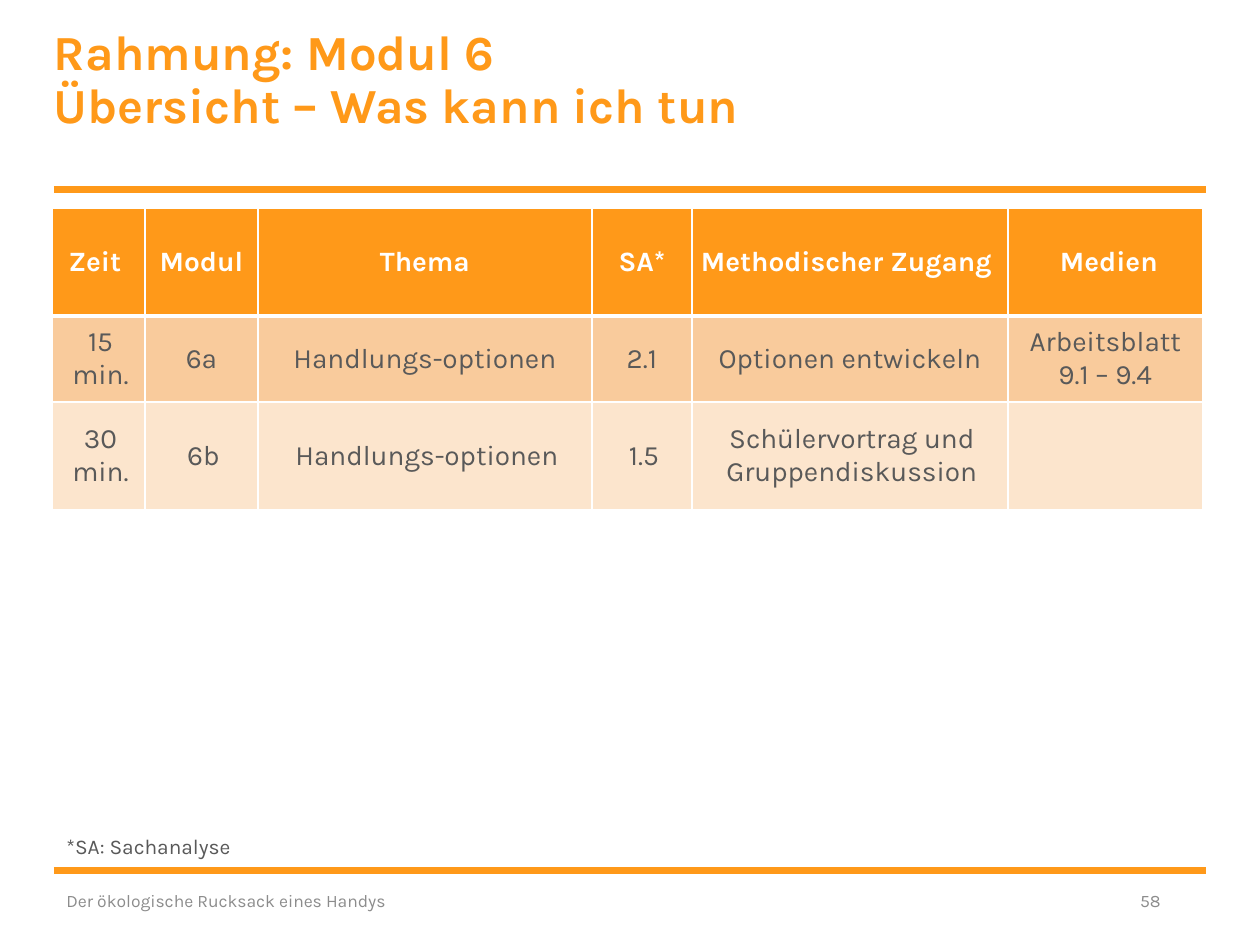
from dataclasses import dataclass
from lxml.etree import SubElement as Sub
from pptx import Presentation
from pptx.dml.color import RGBColor as Rgb
from pptx.enum.shapes import MSO_CONNECTOR as Conn
from pptx.enum.text import MSO_ANCHOR as Anchor, PP_ALIGN as Align
from pptx.oxml.ns import qn
from pptx.util import Pt


@dataclass(frozen=True)
class Theme:
    face: str = "Karla"
    main: str = "FF9919"
    white: str = "FFFFFF"
    ink: str = "595959"
    pale: str = "8C8C8C"
    bands: tuple = ("FF9919", "F9CB9C", "FCE5CD")
    title: int = 28
    body: int = 16
    note: int = 12
    foot: int = 10


class Deck:
    """Holds the theme and the current slide, and draws elements in px."""

    def __init__(self, theme, wide, high):
        self.theme = theme
        self.prs = Presentation()
        self.prs.slide_width, self.prs.slide_height = self.emu(wide, high)
        self.slide = self.prs.slides.add_slide(self.prs.slide_layouts[6])

    def emu(self, *sizes):
        return [round(px * 914400 / 126) for px in sizes]

    def style(self, para, size, color, bold=False, align=Align.LEFT):
        para.alignment = align
        font = para.font
        font.name, font.size, font.bold = self.theme.face, Pt(size), bold
        font.color.rgb = Rgb.from_string(color)

    def rule(self, left, right, y):
        line = self.slide.shapes.add_connector(
            Conn.STRAIGHT, *self.emu(left, y, right, y))
        line.line.color.rgb = Rgb.from_string(self.theme.main)
        line.line.width = Pt(4)
        Sub(line._element.spPr, qn("a:effectLst"))

    def text(self, box, words, size, color, bold=False, align=Align.LEFT,
             anchor=Anchor.TOP):
        frame = self.slide.shapes.add_textbox(*self.emu(*box)).text_frame
        frame.word_wrap = True
        frame.vertical_anchor = anchor
        frame.text = words
        self.style(frame.paragraphs[0], size, color, bold, align)
        return frame

    def title(self, box, words):
        look = self.theme
        frame = self.text(box, words, look.title, look.main, True)
        frame.margin_left = frame.margin_right = 0
        frame.margin_top = frame.margin_bottom = 0
        frame.paragraphs[0].line_spacing = 0.9

    def edge(self, cell, side, width):
        line = Sub(cell._tc.get_or_add_tcPr(), qn(f"a:ln{side}"),
                   w=str(Pt(width)))
        fill = Sub(line, qn("a:solidFill"))
        Sub(fill, qn("a:srgbClr"), val=self.theme.white)

    def cell(self, cell, words, row, inset):
        look = self.theme
        head = row == 0
        for side in "LRTB":
            thick = (row, side) in ((0, "B"), (1, "T"))
            self.edge(cell, side, 3 if thick else 1)
        cell.fill.solid()
        cell.fill.fore_color.rgb = Rgb.from_string(look.bands[row])
        cell.vertical_anchor = Anchor.MIDDLE
        cell.margin_left = cell.margin_right = self.emu(9)[0]
        cell.margin_top = cell.margin_bottom = 0
        cell.text = words
        para = cell.text_frame.paragraphs[0]
        if inset:
            para._p.get_or_add_pPr().set("marL", str(self.emu(4)[0]))
        self.style(para, look.body, look.white if head else look.ink,
                   head, Align.CENTER)

    def table(self, left, top, cols, rows, data):
        box = self.emu(left, top, sum(cols), sum(rows))
        grid = self.slide.shapes.add_table(len(rows), len(cols), *box).table
        grid.horz_banding = False
        for col, wide in zip(grid.columns, self.emu(*cols)):
            col.width = wide
        for row, high in zip(grid.rows, self.emu(*rows)):
            row.height = high
        for r, line in enumerate(data):
            for c, words in enumerate(line):
                inset = r == 2 or (r == 1 and c == 0)
                self.cell(grid.cell(r, c), words, r, inset)


def main():
    look = Theme()
    deck = Deck(look, 1260, 945)
    left, right = 54, 1206
    for y in (190, 871):
        deck.rule(left, right, y)
    deck.title((left, 28, 843, 147),
               "Rahmung: Modul 6\vÜbersicht – Was kann ich tun")
    deck.text((left, 876, 426, 50), "Der ökologische Rucksack eines Handys",
              look.foot, look.pale, anchor=Anchor.MIDDLE)
    deck.text((948, 876, 225, 50), "58", look.foot, look.pale,
              align=Align.RIGHT, anchor=Anchor.MIDDLE)
    deck.table(52, 208, (93, 113, 334, 100, 316, 195), (108, 86, 108), (
        ("Zeit ", "Modul", "Thema", "SA*", "Methodischer Zugang ", " Medien"),
        ("15 min.", "6a", "Handlungs-optionen", "2.1",
         "Optionen entwickeln", "Arbeitsblatt 9.1 – 9.4"),
        ("30 min.", "6b", "Handlungs-optionen", "1.5",
         "Schülervortrag und Gruppendiskussion", ""),
    ))
    deck.text((left, 827, 346, 38), "*SA: Sachanalyse", look.note, look.ink)
    deck.prs.save("out.pptx")


if __name__ == "__main__":
    main()
